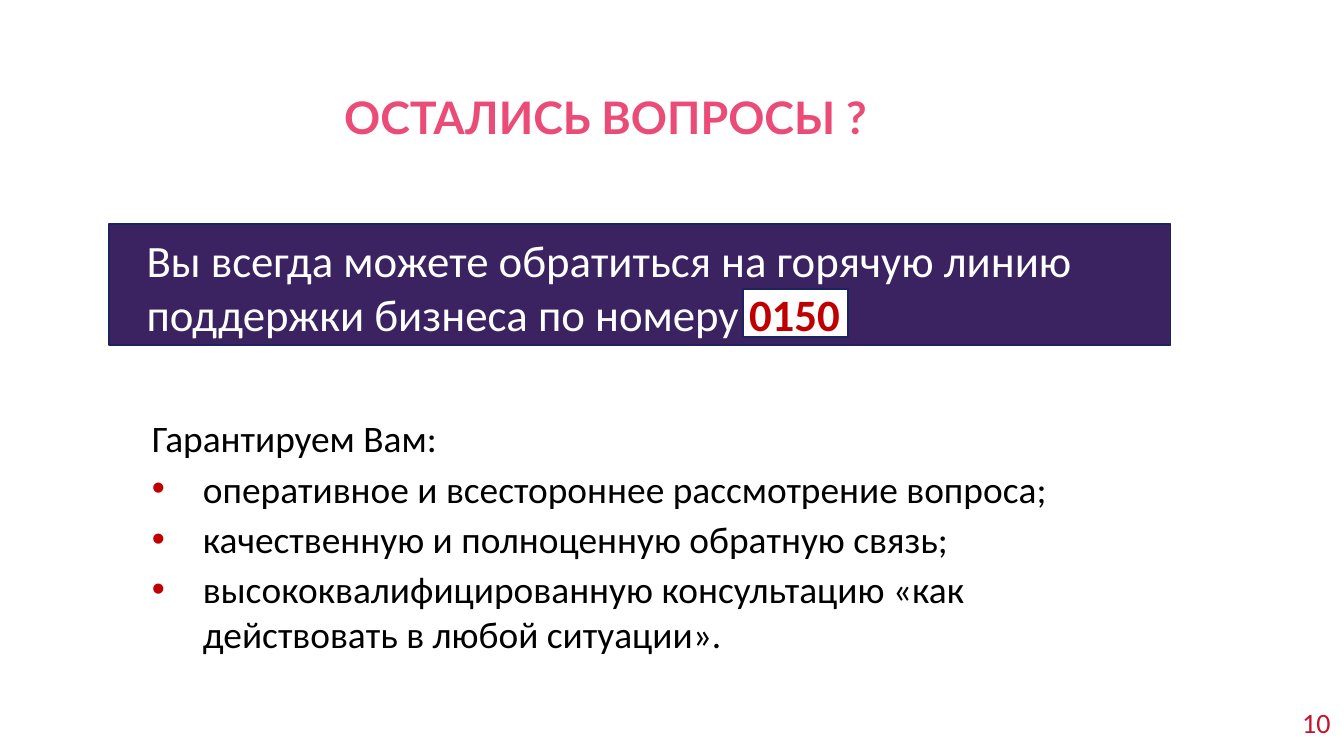
from lxml.etree import SubElement
from pptx import Presentation
from pptx.dml.color import RGBColor
from pptx.enum.shapes import MSO_SHAPE
from pptx.enum.text import MSO_ANCHOR, PP_ALIGN
from pptx.oxml.ns import qn
from pptx.util import Inches, Pt

PINK = RGBColor(0xEB, 0x4B, 0x77)
PURPLE = RGBColor(0x3B, 0x23, 0x62)
NAVY = RGBColor(0x1C, 0x23, 0x5F)
RED = RGBColor(0xC0, 0x00, 0x00)
CRIMSON = RGBColor(0xC5, 0x13, 0x2E)
WHITE = RGBColor(0xFF, 0xFF, 0xFF)
BLACK = RGBColor(0x00, 0x00, 0x00)

PROMISES = [
    "оперативное и всестороннее рассмотрение вопроса;",
    "качественную и полноценную обратную связь;",
    "высококвалифицированную консультацию «как действовать в любой ситуации».",
]


def add_span(para, text, size, color, font="Calibri", bold=False):
    span = para.add_run()
    span.text = text
    span.font.name = font
    span.font.size = Pt(size)
    span.font.color.rgb = color
    span.font.bold = bold


def add_bullet(para, color, indent=0.38):
    properties = para._p.get_or_add_pPr()
    properties.set("marL", str(Inches(indent)))
    properties.set("indent", str(Inches(-indent)))
    bullet_color = SubElement(properties, qn("a:buClr"))
    SubElement(bullet_color, qn("a:srgbClr"), val=str(color))
    SubElement(properties, qn("a:buFont"), typeface="Arial")
    SubElement(properties, qn("a:buChar"), char="•")


class SlideBuilder:
    """Holds the current slide and its shared style."""

    def __init__(self, page):
        self.page = page
        self.space_after = Pt(3)

    def frame(self, box, side=0, edge=0, anchor=MSO_ANCHOR.TOP):
        frame = box.text_frame
        frame.word_wrap = True
        frame.vertical_anchor = anchor
        frame.margin_left = frame.margin_right = Inches(side)
        frame.margin_top = frame.margin_bottom = Inches(edge)
        return frame

    def title(self, text, left, top, width, height):
        box = self.page.shapes.title
        box.left, box.top = Inches(left), Inches(top)
        box.width, box.height = Inches(width), Inches(height)
        para = self.frame(box, edge=0.04, anchor=MSO_ANCHOR.MIDDLE).paragraphs[0]
        para.alignment = PP_ALIGN.CENTER
        add_span(para, text, 24, PINK, font="Lato", bold=True)

    def panel(self, fill, left, top, width, height):
        panel = self.page.shapes.add_shape(
            MSO_SHAPE.RECTANGLE, Inches(left), Inches(top), Inches(width), Inches(height))
        panel.shadow.inherit = False
        panel.fill.solid()
        panel.fill.fore_color.rgb = fill
        panel.line.color.rgb = NAVY
        panel.line.width = Pt(1)

    def text_box(self, left, top, width, height, **margins):
        box = self.page.shapes.add_textbox(
            Inches(left), Inches(top), Inches(width), Inches(height))
        return self.frame(box, **margins)

    def hotline(self, text, number, *place):
        para = self.text_box(*place).paragraphs[0]
        para.space_after = self.space_after
        add_span(para, text, 24, WHITE)
        add_span(para, number, 24, RED, bold=True)

    def bullet_list(self, heading, items, *place):
        frame = self.text_box(*place)
        para = frame.paragraphs[0]
        para.space_after = self.space_after
        add_span(para, heading, 20, BLACK)
        for item in items:
            para = frame.add_paragraph()
            add_bullet(para, RED)
            para.space_after = self.space_after
            add_span(para, item, 20, BLACK)

    def page_number(self, number, *place):
        para = self.text_box(*place, side=0.07, edge=0.04).paragraphs[0]
        para.alignment = PP_ALIGN.RIGHT
        add_span(para, number, 15, CRIMSON)


def main():
    # Widescreen 16:9 page
    deck = Presentation()
    deck.slide_width = Inches(10)
    deck.slide_height = deck.slide_width * 9 // 16
    builder = SlideBuilder(deck.slides.add_slide(deck.slide_layouts[5]))

    # Title and page number
    builder.title("ОСТАЛИСЬ ВОПРОСЫ ?", 0.81, 0.63, 7.39, 0.48)
    builder.page_number("10", 9.53, 5.21, 0.44, 0.3)

    # Hotline banner with the number on a white patch
    builder.panel(PURPLE, 0.81, 1.67, 7.9, 0.9)
    builder.panel(WHITE, 5.53, 2.15, 0.78, 0.36)
    builder.hotline(
        "Вы всегда можете обратиться на горячую линию поддержки бизнеса по номеру ",
        "0150", 1.09, 1.73, 7.25, 0.81)

    # Promises
    builder.bullet_list("Гарантируем Вам:", PROMISES, 1.13, 3.09, 7.25, 1.81)

    deck.save("out.pptx")


if __name__ == "__main__":
    main()
